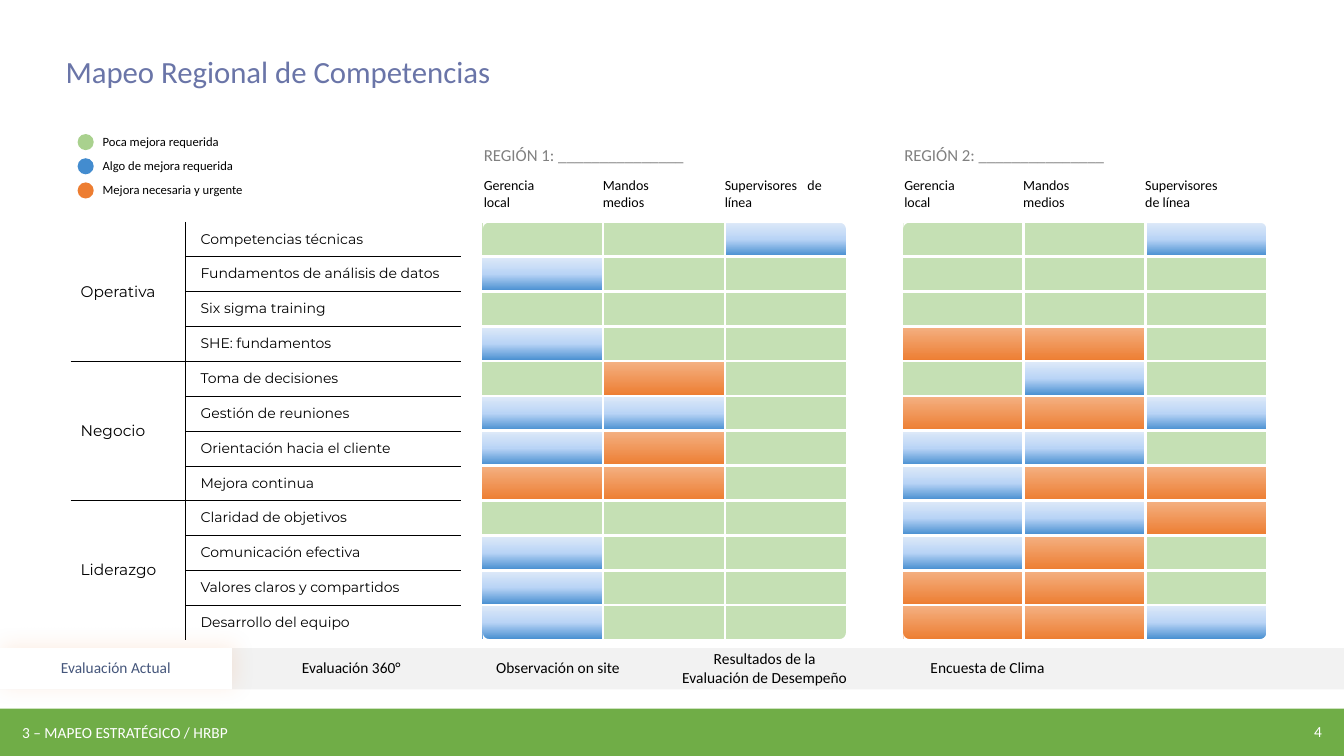
"""Build the regional competency map slide."""
import math
import lxml.etree
import pptx
import pptx.dml.color
import pptx.enum.shapes
import pptx.enum.text
import pptx.oxml.ns
import pptx.util

TITLE = "Mapeo Regional de Competencias"
LEGEND = [("Poca mejora requerida", "little", 1.41),
          ("Algo de mejora requerida", "some", 1.56),
          ("Mejora necesaria y urgente", "urgent", 1.65)]
GROUPS = {
    "Operativa": ["Competencias técnicas", "Fundamentos de análisis de datos",
                  "Six sigma training", "SHE: fundamentos"],
    "Negocio": ["Toma de decisiones", "Gestión de reuniones",
                "Orientación hacia el cliente", "Mejora continua"],
    "Liderazgo": ["Claridad de objetivos", "Comunicación efectiva",
                  "Valores claros y compartidos", "Desarrollo del equipo"],
}
LEVELS = [("Gerencia\nlocal", 0.75), ("Mandos\nmedios", 0.71)]
REGIONS = [
    ("REGIÓN 1: _______________", 4.77, LEVELS + [("Supervisores\tde línea", 1.37)],
     "GGB BGG GGG BGG GOG BBG BOG OOG GGG BGG BGG BGG"),
    ("REGIÓN 2: _______________", 8.94, LEVELS + [("Supervisores\nde línea", 1.05)],
     "GGB GGG GGG OOG GBG OOB BBG BOO BBO BOG OOG OOB"),
]
TABS = [("Evaluación Actual", 2.3), ("Evaluación 360°", 2.37),
        ("Observación on site", 1.73), ("Resultados de la\nEvaluación de Desempeño", 2.37),
        ("Encuesta de Clima", 2.05)]
FOOTER, PAGE_NUMBER = "3 – MAPEO ESTRATÉGICO / HRBP", "4"

THEME = {
    "font": "Calibri", "table_font": "Montserrat",
    "title": "6A75A8", "ink": "000000", "region": "808080", "tab": "45567B",
    "white": "FFFFFF", "bar": "F2F2F2", "footer": "70AD47",
    "little": "A9D18E", "some": "438CCF", "urgent": "ED7D31",
    "title_size": 22, "region_size": 12, "label_size": 11, "text_size": 10, "legend_size": 9,
    "heat": {"G": ["C5E0B4"], "B": ["DFEAF8", "B9D4F6", "438CCF"], "O": ["F4B183", "ED7D31"]},
}
WIDTH, HEIGHT = 13.33, 7.5
TOP, ROW_COUNT, TABLE_HEIGHT = 2.2, 12, 4.15
LEVEL_WIDTH, HEADER_OFFSETS = 1.21, (-0.07, 1.11, 2.32)
CORNER = 0.06

Inches, Pt = pptx.util.Inches, pptx.util.Pt
ALIGN, ANCHOR = pptx.enum.text.PP_ALIGN, pptx.enum.text.MSO_ANCHOR
SHAPE = pptx.enum.shapes.MSO_SHAPE


def rgb(name):
    return pptx.dml.color.RGBColor.from_string(THEME[name])


def assign(target, values):
    for name, value in values.items():
        setattr(target, name, value)


def node(parent, tag, **attributes):
    values = {name: str(value) for name, value in attributes.items()}
    return lxml.etree.SubElement(parent, pptx.oxml.ns.qn("a:" + tag), values)


def write(frame, text, size, color="ink", font="font", align=ALIGN.LEFT):
    for index, line in enumerate(text.split("\n")):
        para = frame.paragraphs[0] if index == 0 else frame.add_paragraph()
        para.alignment = align
        if "\t" in line:
            stops = node(para._p.get_or_add_pPr(), "tabLst")
            node(stops, "tab", pos=Inches(0.82), algn="l")
        span = para.add_run()
        span.text = line
        assign(span.font, {"size": Pt(THEME[size]), "name": THEME[font]})
        span.font.color.rgb = rgb(color)


def add_text(page, area, text, size, color="ink", align=ALIGN.LEFT, **frame_values):
    box = page.shapes.add_textbox(*map(Inches, area))
    assign(box.text_frame, {"word_wrap": True, **frame_values})
    write(box.text_frame, text, size, color, align=align)


def paint(shape, color):
    shape.shadow.inherit = False
    shape.fill.solid()
    shape.fill.fore_color.rgb = rgb(color)
    shape.line.fill.background()
    return shape


def add_block(page, area, color, kind=SHAPE.RECTANGLE):
    return paint(page.shapes.add_shape(kind, *map(Inches, area)), color)


def add_grid(page, left, widths):
    area = (left, TOP, sum(widths), TABLE_HEIGHT)
    grid = page.shapes.add_table(ROW_COUNT, len(widths), *map(Inches, area)).table
    assign(grid, {"first_row": False, "horz_banding": False})
    for column, width in zip(grid.columns, widths):
        column.width = Inches(width)
    for row in grid.rows:
        row.height = Inches(TABLE_HEIGHT / ROW_COUNT)
    return grid


def style_cell(cell, sides, color, points, opacity, stops=()):
    format_node = cell._tc.get_or_add_tcPr()
    for side in "LRTB":
        line = node(format_node, "ln" + side, w=Pt(points))
        if side in sides:
            ink = node(node(line, "solidFill"), "srgbClr", val=THEME[color])
            node(ink, "alpha", val=opacity * 1000)
        else:
            node(line, "noFill")
    if not stops:
        node(format_node, "noFill")
    elif len(stops) == 1:
        node(node(format_node, "solidFill"), "srgbClr", val=stops[0])
    else:
        gradient = node(format_node, "gradFill", rotWithShape=1)
        ramp = node(gradient, "gsLst")
        for index, stop in enumerate(stops):
            place = node(ramp, "gs", pos=100000 * index // (len(stops) - 1))
            node(place, "srgbClr", val=stop)
        node(gradient, "lin", ang=5400000, scaled=0)


def round_corner(page, x, y, toward_x, toward_y):
    arc = []
    for step in range(7):
        angle = step * math.pi / 12
        arc.append((Inches(x + toward_x * CORNER * (1 - math.cos(angle))),
                    Inches(y + toward_y * CORNER * (1 - math.sin(angle)))))
    builder = page.shapes.build_freeform(Inches(x), Inches(y))
    builder.add_line_segments(arc, close=True)
    paint(builder.convert_to_shape(), "white")


def add_region(page, name, left, levels, ratings):
    add_text(page, (left - 0.07, 1.39, 2.22, 0.3), name, "region_size", "region")
    for (level, width), offset in zip(levels, HEADER_OFFSETS):
        add_text(page, (left + offset, 1.7, width, 0.44), level, "text_size")
    grid = add_grid(page, left, [LEVEL_WIDTH] * 3)
    for row, marks in enumerate(ratings.split()):
        for column, mark in enumerate(marks):
            cell = grid.cell(row, column)
            assign(cell, {"margin_top": 0, "margin_bottom": 0})
            style_cell(cell, "LRTB", "white", 2.25, 100, THEME["heat"][mark])
    for x, toward_x in ((left + 0.02, 1), (left + 3 * LEVEL_WIDTH - 0.01, -1)):
        for y, toward_y in ((TOP + 0.01, 1), (TOP + TABLE_HEIGHT - 0.01, -1)):
            round_corner(page, x, y, toward_x, toward_y)


def add_competencies(page):
    grid = add_grid(page, 0.7, [1.14, 2.73])
    row = 0
    for group, skills in GROUPS.items():
        last = row + len(skills) - 1
        grid.cell(row, 0).merge(grid.cell(last, 0))
        write(grid.cell(row, 0).text_frame, group, "label_size", font="table_font")
        first = row
        for skill in skills:
            above, below = "T" * (row > 0), "B" * (row < ROW_COUNT - 1)
            label, entry = grid.cell(row, 0), grid.cell(row, 1)
            edges = "R" + (above if row == first else "")
            edges += "B" * (row in (first, last) and last < ROW_COUNT - 1)
            style_cell(label, edges, "ink", 0.25, 50)
            style_cell(entry, "L" + above + below, "ink", 0.25, 50)
            write(entry.text_frame, skill, "text_size", font="table_font")
            label.vertical_anchor = ANCHOR.MIDDLE
            assign(entry, {"vertical_anchor": ANCHOR.MIDDLE, "margin_left": Inches(0.15)})
            row += 1


def add_tabs(page):
    top, height = 6.43, 0.41
    add_block(page, (0, top, WIDTH, height), "bar")
    active = add_block(page, (0, top, TABS[0][1], height), "white")
    shadow = node(active._element.spPr.find(pptx.oxml.ns.qn("a:effectLst")), "outerShdw",
                  blurRad=Pt(15), dist=Pt(3), dir=315 * 60000, algn="ctr", rotWithShape=0)
    node(node(shadow, "srgbClr", val=THEME["urgent"]), "alpha", val=12000)
    left = 0
    for text, width in TABS:
        add_text(page, (left, top, width, height), text, "label_size",
                 "tab" if left == 0 else "ink", ALIGN.CENTER,
                 vertical_anchor=ANCHOR.MIDDLE, margin_bottom=Inches(0.07))
        left += width


def main():
    deck = pptx.Presentation()
    assign(deck, {"slide_width": Inches(WIDTH), "slide_height": Inches(HEIGHT)})
    page = deck.slides.add_slide(deck.slide_layouts[5])
    title = page.shapes.title
    assign(title, dict(zip(("left", "top", "width", "height"),
                           map(Inches, (0.55, 0.43, 9.15, 0.49)))))
    assign(title.text_frame, {"vertical_anchor": ANCHOR.TOP, "word_wrap": True})
    write(title.text_frame, TITLE, "title_size", "title")
    title.text_frame.paragraphs[0].line_spacing = Pt(29.4)
    for index, (text, color, width) in enumerate(LEGEND):
        top = 1.33 + 0.24 * index
        add_block(page, (0.77, top, 0.16, 0.16), color, SHAPE.OVAL)
        add_text(page, (0.92, top - 0.05, width, 0.25), text, "legend_size")
    for region in REGIONS:
        add_region(page, *region)
    add_competencies(page)
    add_tabs(page)
    add_block(page, (0, 7.03, WIDTH, 0.47), "footer")
    add_text(page, (0.12, 7.12, 2.35, 0.29), FOOTER, "label_size", "white")
    add_text(page, (12.08, 7.06, 1.13, 0.4), PAGE_NUMBER, "label_size", "white",
             ALIGN.RIGHT, vertical_anchor=ANCHOR.MIDDLE)
    deck.save("out.pptx")


if __name__ == "__main__":
    main()
